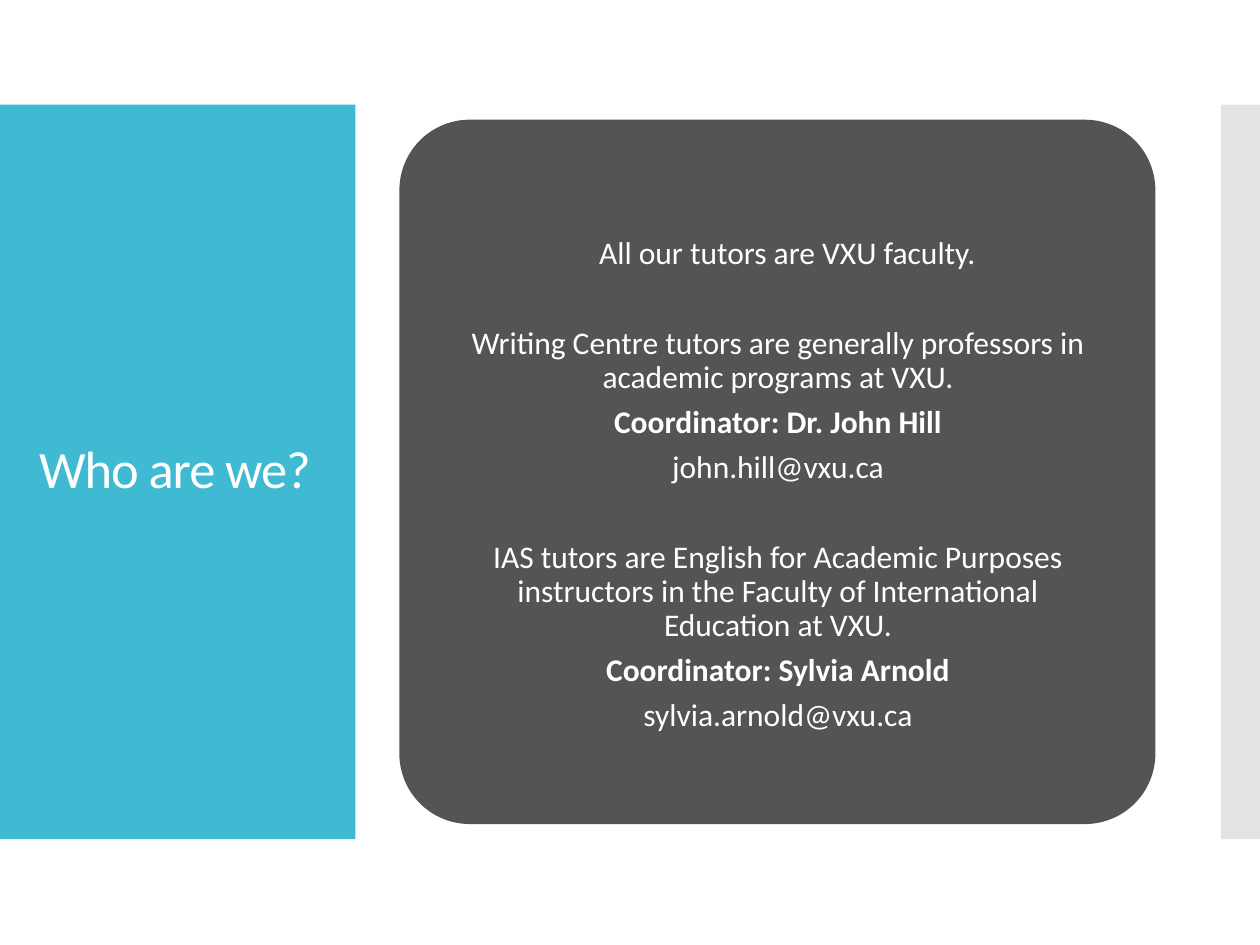
from lxml import etree
from pptx import Presentation
from pptx.dml.color import RGBColor
from pptx.enum import shapes, text
from pptx.oxml.ns import qn
from pptx.util import Inches, Pt

TITLE = "Who are we?"
# wording, bold, space after in points, left indent in inches
LINES = [
    ("All our tutors are VXU faculty.", False, 32, 0.15),
    ("Writing Centre tutors are generally professors in academic programs at VXU.", False, 6.3, 0),
    ("Coordinator: Dr. John Hill", True, 6.3, 0),
    ("john.hill@vxu.ca", False, 32, 0),
    ("IAS tutors are English for Academic Purposes instructors in the "
     "Faculty of International Education at VXU.", False, 6.3, 0),
    ("Coordinator: Sylvia Arnold", True, 6.3, 0),
    ("sylvia.arnold@vxu.ca", False, 0, 0),
]
FONT = "Calibri"
WHITE, TEAL, GREY, CHARCOAL = "FFFFFF", "40BAD2", "C8C8C8", "545454"
BAND_TOP, BAND_HEIGHT = 0.83, 5.83


def paint(target, color):
    """Give a fill or font colour object a solid hex colour."""
    target.rgb = RGBColor.from_string(color)


def add_block(page, kind, left, top, width, height, color):
    block = page.shapes.add_shape(
        kind, Inches(left), Inches(top), Inches(width), Inches(height))
    block.shadow.inherit = False
    block.fill.solid()
    paint(block.fill.fore_color, color)
    block.line.fill.background()
    return block


def style(para, size, bold=False):
    para.line_spacing = 0.9
    for span in para.runs:
        span.font.name = FONT
        span.font.size = Pt(size)
        span.font.bold = bold
        paint(span.font.color, WHITE)


def add_title(page, panel):
    title = page.shapes.title
    title.left, title.top = Inches(0.21), Inches(1.23)
    title.width, title.height = Inches(2.42), Inches(5.03)
    title.element.addprevious(panel.element)  # panel goes behind the title
    frame = title.text_frame
    frame.text = TITLE
    frame.word_wrap = True
    frame.vertical_anchor = text.MSO_ANCHOR.MIDDLE
    para = frame.paragraphs[0]
    para.alignment = text.PP_ALIGN.LEFT
    style(para, 30)
    para.runs[0].font._element.set("spc", "-60")


def add_lines(page):
    box = page.shapes.add_textbox(
        Inches(3.34), Inches(1.11), Inches(5.67), Inches(5.26))
    frame = box.text_frame
    frame.word_wrap = True
    frame.vertical_anchor = text.MSO_ANCHOR.TOP
    frame.margin_left = frame.margin_right = frame.margin_bottom = Inches(0.27)
    frame.margin_top = Inches(0.77)
    frame.text = "\n".join(line[0] for line in LINES)
    for para, (_, bold, gap, indent) in zip(frame.paragraphs, LINES):
        style(para, 18, bold)
        para.alignment = text.PP_ALIGN.CENTER
        para.space_after = Pt(gap)
        if indent:
            para._p.get_or_add_pPr().set("marL", str(Inches(indent)))


def main():
    deck = Presentation()
    deck.slide_width, deck.slide_height = Inches(10), Inches(7.5)
    page = deck.slides.add_slide(deck.slide_layouts[5])
    rectangle = shapes.MSO_SHAPE.RECTANGLE

    panel = add_block(page, rectangle, 0, BAND_TOP, 2.82, BAND_HEIGHT, TEAL)
    add_title(page, panel)

    edge = add_block(page, rectangle, 9.69, BAND_TOP, 0.32, BAND_HEIGHT, GREY)
    tint = edge.element.spPr.find(qn("a:solidFill"))[0]
    etree.SubElement(tint, qn("a:alpha"), val="50000")

    card = add_block(page, shapes.MSO_SHAPE.ROUNDED_RECTANGLE,
                     3.17, 0.95, 6, 5.59, CHARCOAL)
    card.adjustments[0] = 0.1
    add_lines(page)
    deck.save("out.pptx")


if __name__ == "__main__":
    main()
